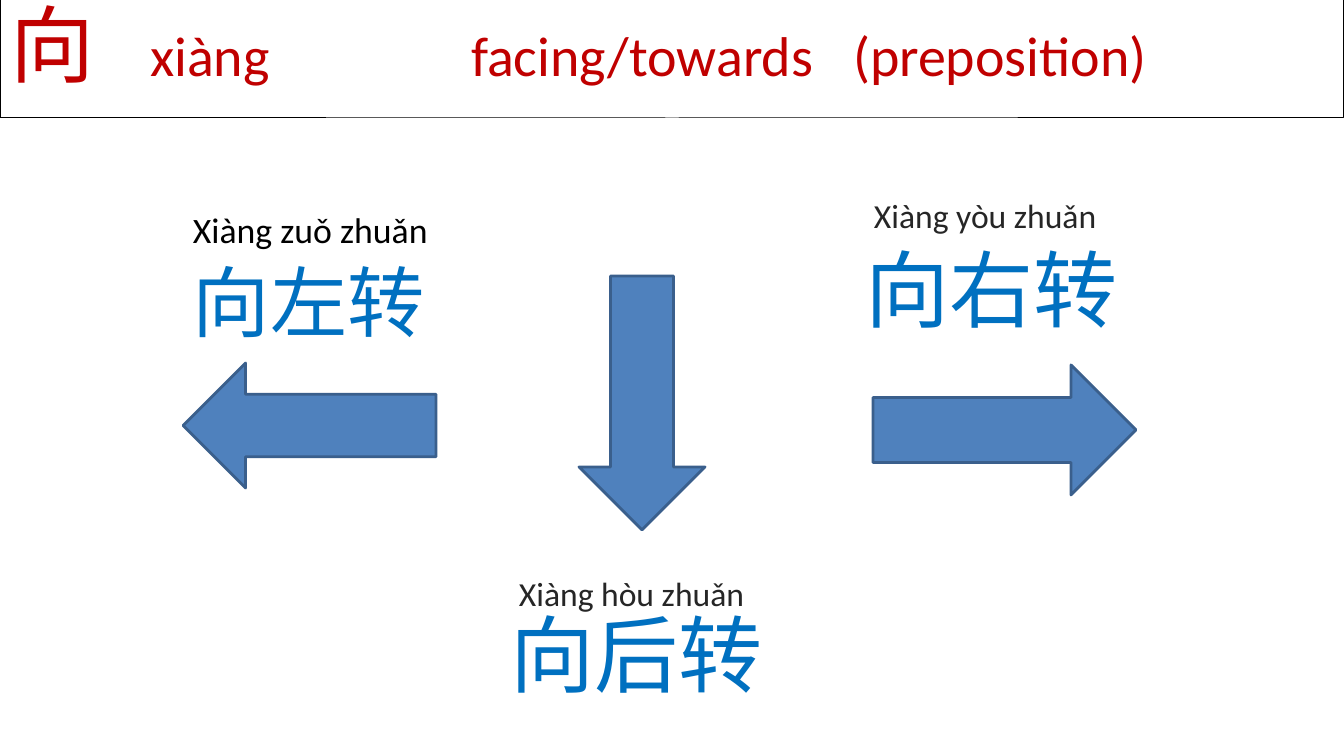
"""Build a slide teaching the preposition 向 with three turning directions."""
from dataclasses import dataclass

from lxml import etree
from pptx import Presentation
from pptx import util as u
from pptx.dml.color import RGBColor
from pptx.enum import shapes, text
from pptx.oxml.ns import qn

EMU_PER_PX = 914400 / 100.8
LATIN, CHINESE = "Calibri", "Noto Sans CJK SC"
RED, BLUE, DARK, BLACK = "C00000", "0070C0", "262626", "000000"
ARROW_FILL, ARROW_LINE = "4F81BD", "3A5F8C"


@dataclass
class Box:
    left: int
    top: int
    width: int
    height: int


@dataclass
class Arrow:
    box: Box
    rotation: int


@dataclass
class Phrase:
    box: Box
    pinyin: str
    hanzi: str
    pinyin_size: float = 24
    hanzi_size: float = 60
    pinyin_color: str = DARK
    indent: int = 8
    pinyin_spacing: float = 1.0
    gap: int = 10


ARROWS = [
    Arrow(Box(873, 365, 263, 130), 0),
    Arrow(Box(183, 363, 253, 125), 180),
    Arrow(Box(515, 340, 254, 126), 90),
]
PHRASES = [
    Phrase(Box(183, 203, 300, 145), "Xiàng zuǒ zhuǎn", "向左转", 25.5, 55.2, BLACK, 0),
    Phrase(Box(856, 190, 300, 173), "Xiàng yòu zhuǎn", "向右转"),
    Phrase(Box(501, 573, 300, 155), "Xiàng hòu zhuǎn", "向后转", pinyin_spacing=0.9, gap=0),
]
HEADER = Box(0, -1, 1344, 119)
HEADER_TABS = (140, 461, 843)


def px(n: int) -> int:
    return u.Emu(round(n * EMU_PER_PX))


def color(value: str) -> RGBColor:
    return RGBColor.from_string(value)


def place(box: Box) -> tuple:
    return px(box.left), px(box.top), px(box.width), px(box.height)


def set_all(target, values: dict) -> None:
    for name, value in values.items():
        setattr(target, name, value)


def add_run(p, words: str, size: float, font: str, hex_color: str) -> None:
    r = p.add_run()
    r.text = words
    r.font.color.rgb = color(hex_color)
    set_all(r.font, {"size": u.Pt(size), "name": font})
    etree.SubElement(r._r.get_or_add_rPr(), qn("a:ea"), typeface=font)


def prepare_frame(tf) -> None:
    set_all(tf, {
        "word_wrap": True,
        "auto_size": text.MSO_AUTO_SIZE.NONE,
        "vertical_anchor": text.MSO_ANCHOR.TOP,
    })


def draw_header(s) -> None:
    sp = s.shapes.title
    set_all(sp, dict(zip(("left", "top", "width", "height"), place(HEADER))))
    sp.fill.background()
    sp.line.color.rgb = color(BLACK)
    sp.line.width = u.Pt(0.75)
    prepare_frame(sp.text_frame)
    p = sp.text_frame.paragraphs[0]
    set_all(p, {"alignment": text.PP_ALIGN.LEFT, "line_spacing": 0.9, "space_before": u.Pt(0)})
    tabs = etree.SubElement(p._p.get_or_add_pPr(), qn("a:tabLst"))
    for stop in HEADER_TABS:
        etree.SubElement(tabs, qn("a:tab"), pos=str(px(stop)), algn="l")
    add_run(p, "向\t", 60, CHINESE, RED)
    add_run(p, "xiàng\tfacing/towards\t(preposition)", 40, LATIN, RED)


def draw_arrow(s, arrow: Arrow) -> None:
    sp = s.shapes.add_shape(shapes.MSO_SHAPE.RIGHT_ARROW, *place(arrow.box))
    sp.rotation = arrow.rotation
    sp.shadow.inherit = False
    sp.fill.solid()
    sp.fill.fore_color.rgb = color(ARROW_FILL)
    sp.line.color.rgb = color(ARROW_LINE)
    sp.line.width = u.Pt(2)


def draw_phrase(s, phrase: Phrase) -> None:
    tf = s.shapes.add_textbox(*place(phrase.box)).text_frame
    prepare_frame(tf)
    p = tf.paragraphs[0]
    p.line_spacing = phrase.pinyin_spacing
    p._p.get_or_add_pPr().set("marL", str(px(phrase.indent)))
    add_run(p, phrase.pinyin, phrase.pinyin_size, LATIN, phrase.pinyin_color)
    p = tf.add_paragraph()
    set_all(p, {"line_spacing": 0.9, "space_before": u.Pt(phrase.gap)})
    add_run(p, phrase.hanzi, phrase.hanzi_size, CHINESE, BLUE)


def main() -> None:
    prs = Presentation()
    set_all(prs, {"slide_width": px(1344), "slide_height": px(756)})
    s = prs.slides.add_slide(prs.slide_layouts[5])
    draw_header(s)
    for arrow in ARROWS:
        draw_arrow(s, arrow)
    for phrase in PHRASES:
        draw_phrase(s, phrase)
    prs.save("out.pptx")


if __name__ == "__main__":
    main()
